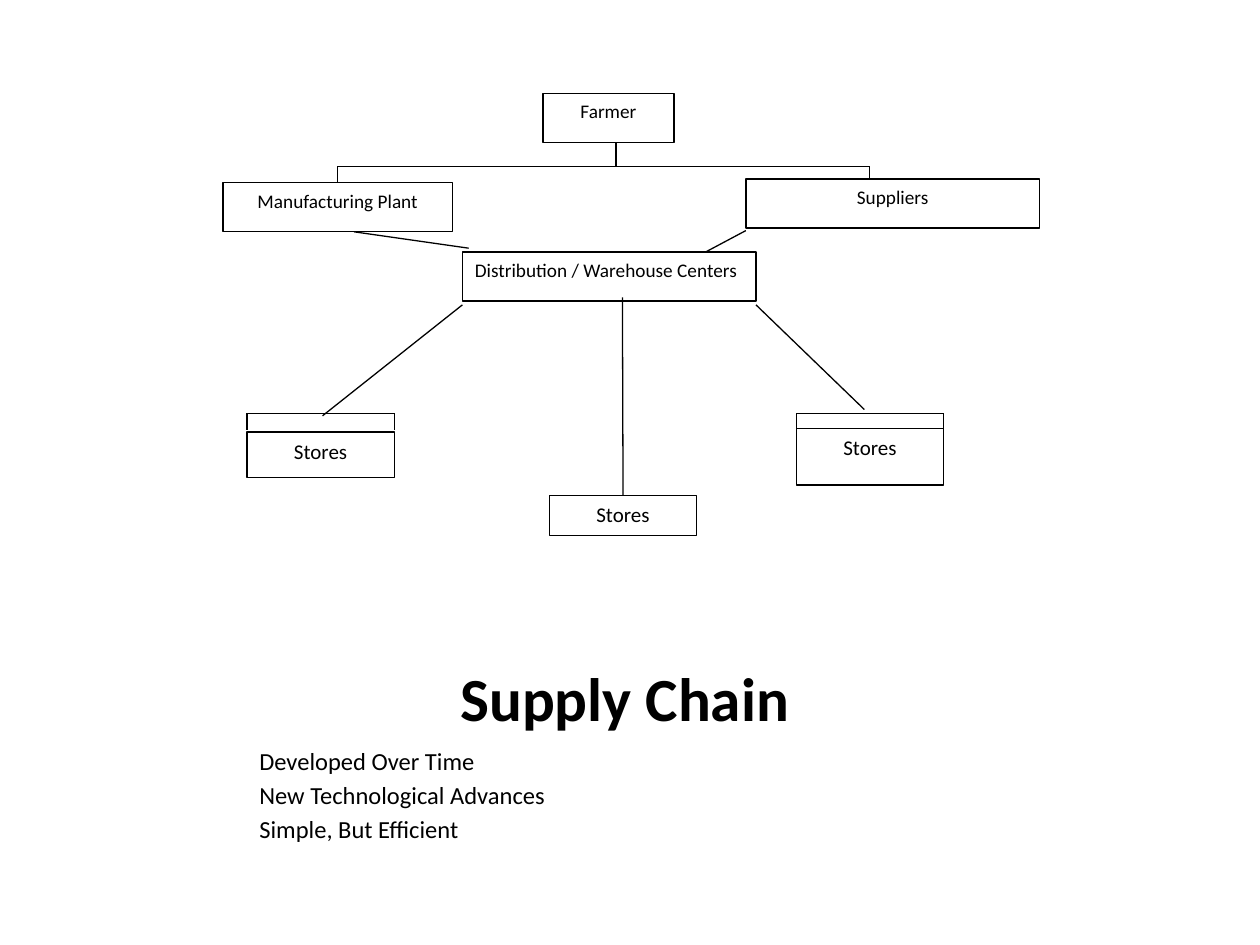
import pptx
import pptx.util
import pptx.dml.color
import pptx.enum.shapes
import pptx.enum.text
import lxml.etree
from dataclasses import dataclass
from pptx.util import Inches


@dataclass
class Theme:
    font: str = "Calibri"
    ink: pptx.dml.color.RGBColor = pptx.dml.color.RGBColor(0, 0, 0)
    paper: pptx.dml.color.RGBColor = pptx.dml.color.RGBColor(255, 255, 255)
    title: int = 35
    body: int = 14
    store: int = 12
    node: int = 11
    line: float = 0.75


theme = Theme()
align = pptx.enum.text.PP_ALIGN
anchor = pptx.enum.text.MSO_ANCHOR


def write(para, text, size, side, bold=False):
    para.alignment = side
    run = para.add_run()
    run.text = text
    run.font.name = theme.font
    run.font.size = pptx.util.Pt(size)
    run.font.bold = bold
    run.font.color.rgb = theme.ink


deck = pptx.Presentation()
deck.slide_width, deck.slide_height = Inches(10), Inches(7.5)
slide = deck.slides.add_slide(deck.slide_layouts[6])
shapes = slide.shapes

# Title
frame = shapes.add_textbox(Inches(1.96), Inches(5.25), Inches(6), Inches(0.62)).text_frame
frame.word_wrap = True
frame.vertical_anchor = anchor.BOTTOM
write(frame.paragraphs[0], "Supply Chain", theme.title, align.CENTER, True)

# Body text
frame = shapes.add_textbox(Inches(1.96), Inches(5.87), Inches(6), Inches(1.05)).text_frame
frame.word_wrap = True
points = ["Developed Over Time", "New Technological Advances", "Simple, But Efficient"]
for i, text in enumerate(points):
    para = frame.add_paragraph() if i else frame.paragraphs[0]
    para.space_before = pptx.util.Pt(theme.body * 0.2)
    write(para, text, theme.body, align.LEFT)

# Boxes of the chain: key, text, left, top, width, height, size, alignment
nodes = [
    ("farm", "Farmer", 4.31, 0.74, 1.04, 0.39, theme.node, align.CENTER),
    ("plant", "Manufacturing Plant", 1.77, 1.45, 1.82, 0.39, theme.node, align.CENTER),
    ("supply", "Suppliers", 5.92, 1.42, 2.33, 0.39, theme.node, align.CENTER),
    ("hub", "Distribution / Warehouse Centers", 3.67, 2, 2.33, 0.39, theme.node, align.LEFT),
    ("mid", "Stores", 4.36, 3.93, 1.17, 0.32, theme.store, align.CENTER),
    ("left", "Stores", 1.96, 3.43, 1.17, 0.36, theme.store, align.CENTER),
    ("right", "Stores", 6.32, 3.4, 1.17, 0.45, theme.store, align.CENTER),
]
boxes = {}
for key, text, x, y, w, h, size, side in nodes:
    box = shapes.add_shape(pptx.enum.shapes.MSO_SHAPE.RECTANGLE,
                           Inches(x), Inches(y), Inches(w), Inches(h))
    box.shadow.inherit = False
    box.fill.solid()
    box.fill.fore_color.rgb = theme.paper
    box.line.color.rgb = theme.ink
    box.line.width = pptx.util.Pt(theme.line)
    box.text_frame.word_wrap = True
    box.text_frame.vertical_anchor = anchor.TOP
    write(box.text_frame.paragraphs[0], text, size, side)
    boxes[key] = box

# Lines: start x, start y, end x, end y, box whose top middle they join
links = [
    # Farmer to plant and suppliers
    (4.89, 1.13, 4.89, 1.32, None),
    (4.11, 1.32, 6.9, 1.32, None),
    (4.11, 1.32, 2.68, 1.32, None),
    (2.68, 1.32, 2.68, 1.45, "plant"),
    (6.9, 1.32, 6.9, 1.42, None),
    # Plant and suppliers to the hub
    (5.92, 1.83, 5.6, 2, None),
    (3.72, 1.97, 2.81, 1.84, None),
    # Hub to the stores
    (6, 2.42, 6.86, 3.25, None),
    (3.67, 2.42, 2.56, 3.3, None),
    (4.94, 2.36, 4.94, 3.93, "mid"),
]
# Roofs over the outer stores
for x in (1.96, 6.32):
    links.append((x, 3.28, x + 1.17, 3.28, None))
    links += [(edge, 3.28, edge, 3.41, None) for edge in (x, x + 1.17)]

for x1, y1, x2, y2, key in links:
    link = shapes.add_connector(pptx.enum.shapes.MSO_CONNECTOR.STRAIGHT,
                                Inches(x1), Inches(y1), Inches(x2), Inches(y2))
    if key:
        link.end_connect(boxes[key], 0)
    link.line.color.rgb = theme.ink
    link.line.width = pptx.util.Pt(theme.line)
    props = link.element.spPr
    lxml.etree.SubElement(props, pptx.oxml.ns.qn("a:effectLst"))

deck.save("out.pptx")
